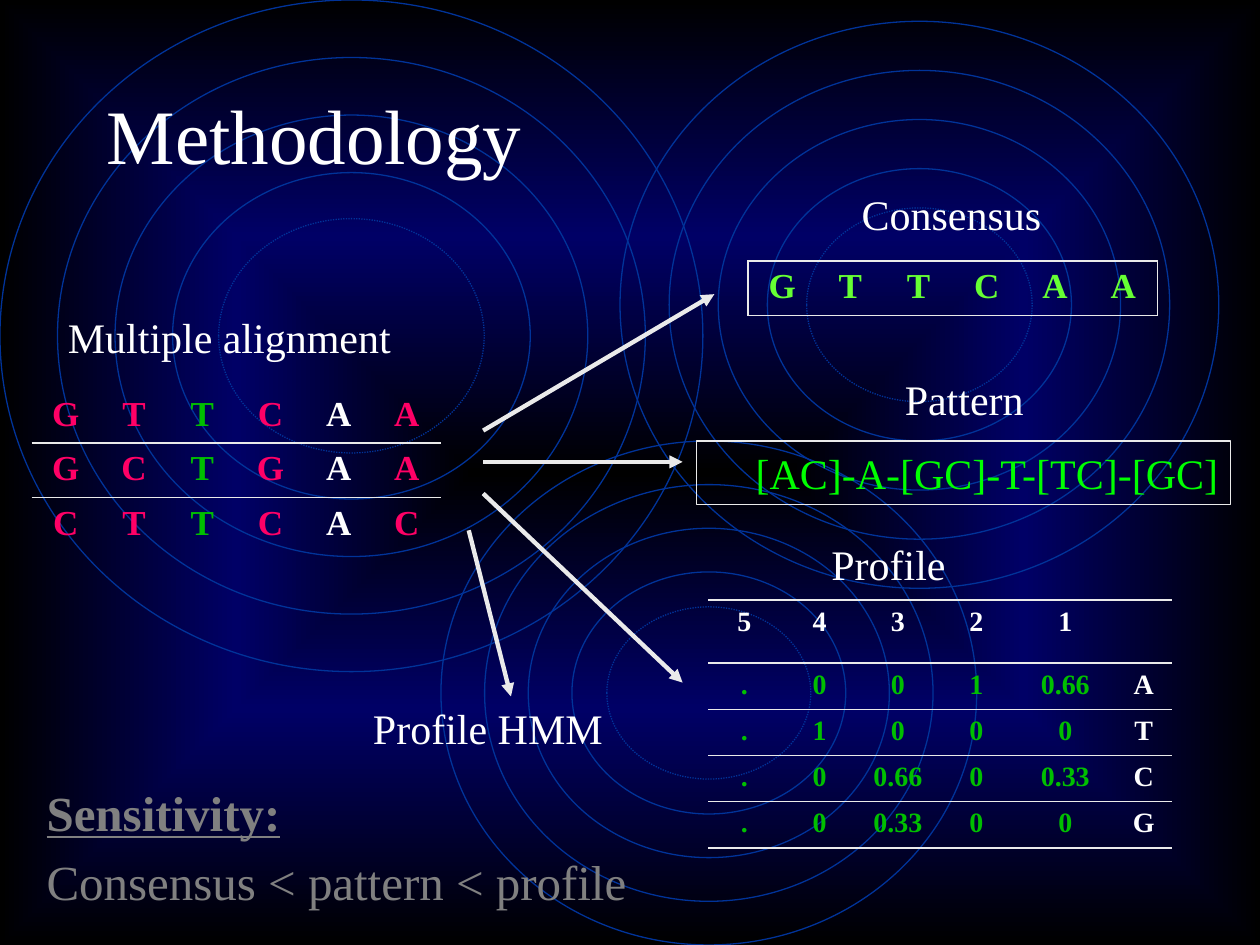
from lxml.etree import SubElement as Sub
from pptx import Presentation
from pptx.dml.color import RGBColor as RGB
from pptx.enum.dml import MSO_LINE as Dash
from pptx.enum.shapes import MSO_CONNECTOR as Conn, MSO_SHAPE as Kind
from pptx.enum.text import MSO_ANCHOR as Anchor, PP_ALIGN as Align
from pptx.oxml import parse_xml
from pptx.oxml.ns import nsdecls, qn
from pptx.util import Cm, Pt

FONT = "Times New Roman"
NO_GRID = "{2D5ABB26-0587-4C30-8999-92F81FD0307C}"
BLACK = RGB(0x00, 0x00, 0x00)
NAVY = RGB(0x00, 0x00, 0x66)
BLUE = RGB(0x00, 0x33, 0x99)
WHITE = RGB(0xFF, 0xFF, 0xFF)
PALE = RGB(0xEA, 0xEA, 0xEA)
GREY = RGB(0x80, 0x80, 0x80)
PINK = RGB(0xFF, 0x00, 0x66)
GREEN = RGB(0x00, 0xBF, 0x00)
LIME = RGB(0x66, 0xFF, 0x33)
NEON = RGB(0x00, 0xFF, 0x00)


class Deck:
    """Holds the style and the current slide."""

    def __init__(self):
        self.prs = Presentation()
        self.prs.slide_width, self.prs.slide_height = Cm(25.4), Cm(19.05)
        self.slide = self.prs.slides.add_slide(self.prs.slide_layouts[6])
        self.shapes = self.slide.shapes

    def glow(self, *hues):
        """Fill the background with a gradient that runs to the centre."""
        gap = 100000 // (len(hues) - 1)
        stops = "".join(
            f'<a:gs pos="{i * gap}"><a:srgbClr val="{hue}"/></a:gs>'
            for i, hue in enumerate(hues))
        self.slide.element.cSld.insert(0, parse_xml(
            f'<p:bg {nsdecls("p", "a")}><p:bgPr><a:gradFill rotWithShape="0">'
            f'<a:gsLst>{stops}</a:gsLst><a:path path="shape">'
            '<a:fillToRect l="50000" t="50000" r="50000" b="50000"/></a:path>'
            '</a:gradFill><a:effectLst/></p:bgPr></p:bg>'))

    def outline(self, kind, box, hue):
        shape = self.shapes.add_shape(kind, *map(Cm, box))
        shape.shadow.inherit = False
        shape.fill.background()
        shape.line.color.rgb = hue
        shape.line.width = Pt(0.75)
        return shape

    def rings(self, x, y, w, h, step):
        """Draw nested ellipses, the innermost one dotted."""
        for i in (0, 1, 2, 3, 3.8):
            d = i * step
            box = x + d, y + d, w - 2 * d, h - 2 * d
            ring = self.outline(Kind.OVAL, box, BLUE)
            if i == 3.8:
                ring.line.dash_style = Dash.ROUND_DOT

    def run(self, para, text, size, hue, bold=False, under=False):
        run = para.add_run()
        run.text = text
        font = run.font
        font.name, font.size, font.bold = FONT, Pt(size), bold
        font.underline = under
        font.color.rgb = hue

    def text(self, box, text, size=24, hue=WHITE, anchor=Anchor.TOP, wrap=False):
        frame = self.shapes.add_textbox(*map(Cm, box)).text_frame
        frame.word_wrap, frame.vertical_anchor = wrap, anchor
        self.run(frame.paragraphs[0], text, size, hue)

    def note(self, box, head, body, size, hue):
        frame = self.shapes.add_textbox(*map(Cm, box)).text_frame
        frame.word_wrap = False
        self.run(frame.paragraphs[0], head, size, hue, True, True)
        para = frame.add_paragraph()
        para.space_before = Pt(size * 0.2)
        self.run(para, body, size, hue)

    def frame(self, box, text, hue):
        shape = self.outline(Kind.RECTANGLE, box, PALE)
        shape.text_frame.vertical_anchor = Anchor.TOP
        para = shape.text_frame.paragraphs[0]
        para.alignment = Align.RIGHT
        self.run(para, text, 24, hue)

    def arrow(self, *ends):
        wire = self.shapes.add_connector(Conn.STRAIGHT, *map(Cm, ends))
        wire.line.color.rgb = PALE
        wire.line.width = Pt(2.5)
        Sub(wire.line._get_or_add_ln(), qn("a:tailEnd"), type="triangle")
        Sub(wire._element.spPr, qn("a:effectLst"))

    def edge(self, cell, side):
        props = cell._tc.get_or_add_tcPr()
        line = Sub(props, qn(f"a:ln{side}"), w=str(Pt(1)))
        fill = Sub(line, qn("a:solidFill"))
        Sub(fill, qn("a:srgbClr"), val=str(PALE))

    def table(self, x, y, cols, highs, rows, size, tint, outer=""):
        """Rule between rows, and on the outer sides named from L, R, T, B."""
        box = map(Cm, (x, y, sum(cols), sum(highs)))
        grid = self.shapes.add_table(len(highs), len(cols), *box).table
        grid.first_row = grid.horz_banding = False
        grid._tbl.tblPr.find(qn("a:tableStyleId")).text = NO_GRID
        for col, w in zip(grid.columns, cols):
            col.width = Cm(w)
        for row, h in zip(grid.rows, highs):
            row.height = Cm(h)
        last, end = len(highs) - 1, len(cols) - 1
        for r, row in enumerate(rows):
            for c, text in enumerate(row):
                cell = grid.cell(r, c)
                rim = {"L": c == 0, "R": c == end, "T": r == 0, "B": r == last}
                for side, out in rim.items():
                    if side in outer if out else side in "TB":
                        self.edge(cell, side)
                cell.fill.background()
                if text:
                    para = cell.text_frame.paragraphs[0]
                    para.alignment = Align.CENTER
                    self.run(para, text, size, tint(r, c), True)


def main():
    deck = Deck()
    deck.glow(BLACK, NAVY, BLACK)
    deck.rings(0, 0, 14.17, 13.54, 1.16)
    deck.rings(8.89, 8.89, 10.8, 10.16, 0.88)
    deck.rings(12.5, 0.43, 12.07, 11.43, 0.99)

    bases = [1.375] * 6
    tints = PINK, PINK, GREEN, PINK, WHITE, PINK
    deck.table(0.64, 7.83, bases, [1.1] * 3, ["GTTCAA", "GCTGAA", "CTTCAC"],
               20, lambda r, c: tints[c])
    profile = [
        ("5", "4", "3", "2", "1", ""),
        (".", "0", "0", "1", "0.66", "A"),
        (".", "1", "0", "0", "0", "T"),
        (".", "0", "0.66", "0", "0.33", "C"),
        (".", "0", "0.33", "0", "0", "G"),
    ]
    deck.table(14.28, 12.1, [1.45, 1.58, 1.58, 1.58, 2.01, 1.15],
               [1.27] + [0.93] * 4, profile, 16,
               lambda r, c: WHITE if r == 0 or c == 5 else GREEN, "TB")
    deck.table(15.08, 5.26, bases, [1.1], ["GTTCAA"], 20,
               lambda r, c: LIME, "LRTB")
    deck.frame((14.04, 8.89, 10.77, 1.28), "[AC]-A-[GC]-T-[TC]-[GC]", NEON)

    for ends in ((9.74, 8.68, 14.4, 5.93), (9.74, 9.31, 13.76, 9.31),
                 (9.74, 9.95, 13.76, 13.76), (9.45, 10.69, 10.3, 14.04)):
        deck.arrow(*ends)

    for x, y, w, label in (
        (1.12, 6.15, 7.09, "Multiple alignment"),
        (17.12, 3.68, 4.17, "Consensus"),
        (17.99, 7.41, 2.92, "Pattern"),
        (16.51, 10.73, 3.05, "Profile"),
        (7.27, 14.04, 5.18, "Profile HMM"),
    ):
        deck.text((x, y, w, 1.28), label)
    deck.note((0.69, 15.65, 12.32, 4.09), "Sensitivity:",
              "Consensus < pattern < profile", 28, GREY)
    deck.text((1.9, 1.11, 21.59, 3.18), "Methodology", 44,
              anchor=Anchor.MIDDLE, wrap=True)
    deck.prs.save("out.pptx")


if __name__ == "__main__":
    main()
